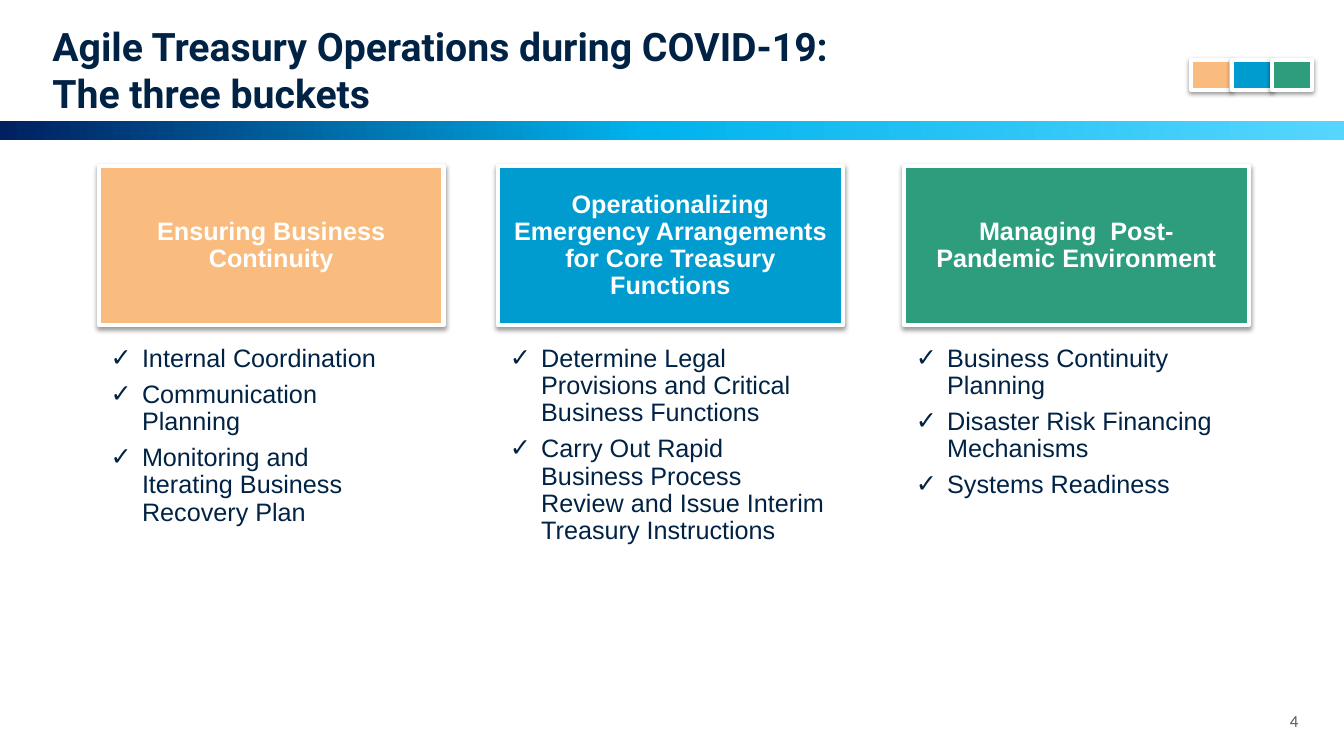
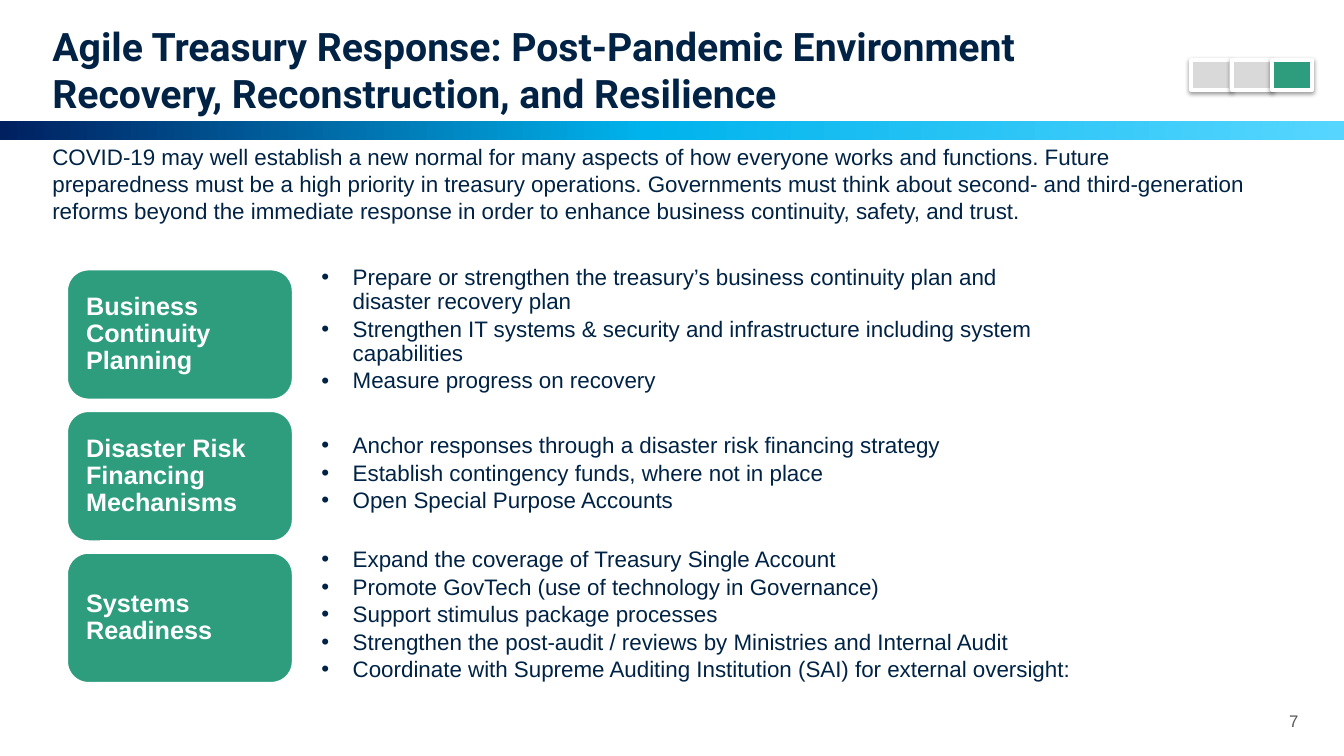
"""Build two slides on agile treasury operations during COVID-19."""
from copy import deepcopy

from pptx import Presentation
from pptx.dml.color import RGBColor
from pptx.enum.shapes import MSO_SHAPE
from pptx.enum.text import MSO_ANCHOR, MSO_AUTO_SIZE, PP_ALIGN
from pptx.oxml import parse_xml
from pptx.oxml.ns import nsdecls, qn
from pptx.util import Cm, Pt

COLORS = {
    "navy": "002345", "white": "FFFFFF", "gray": "595959", "inactive": "D9D9D9",
    "orange": "FABB7E", "blue": "009CCF", "green": "2E9D7E",
    "band start": "002060", "band middle": "00B3EC", "band end": "56D6FF",
}
BUCKET_COLORS = ["orange", "blue", "green"]


def write_text(shape, lines, size, color="navy", font="Arial", bold=False, bullet=None,
               align=PP_ALIGN.LEFT, anchor=MSO_ANCHOR.TOP, insets=(0, 0, 0, 0),
               spacing=None, after=0):
    """Fill a shape with evenly formatted paragraphs."""
    frame = shape.text_frame
    frame.word_wrap = True
    frame.vertical_anchor = anchor
    frame.margin_left, frame.margin_top, frame.margin_right, frame.margin_bottom = map(Cm, insets)
    frame.text = "\n".join(lines)
    for paragraph in frame.paragraphs:
        paragraph.alignment = align
        paragraph.line_spacing = spacing
        paragraph.space_after = Pt(after)
        if bullet:
            properties = paragraph._p.get_or_add_pPr()
            properties.set("marL", str(Cm(0.79)))
            properties.set("indent", str(-Cm(0.79)))
            properties.append(parse_xml(f'<a:buFont {nsdecls("a")} typeface="Arial"/>'))
            properties.append(parse_xml(f'<a:buChar {nsdecls("a")} char="{bullet}"/>'))
        paragraph.font.name = font
        paragraph.font.size = Pt(size)
        paragraph.font.bold = bold
        paragraph.font.color.rgb = RGBColor.from_string(COLORS[color])


def add_box(shapes, kind, left, top, width, height, color, line_width, shadow=False):
    """Add a filled box with a white outline and, if asked, a soft shadow."""
    box = shapes.add_shape(kind, Cm(left), Cm(top), Cm(width), Cm(height))
    box.fill.solid()
    box.fill.fore_color.rgb = RGBColor.from_string(COLORS[color])
    box.line.color.rgb = RGBColor.from_string(COLORS["white"])
    box.line.width = Pt(line_width)
    box.shadow.inherit = False
    if shadow:
        box._element.spPr.find(qn("a:effectLst")).append(parse_xml(
            f'<a:outerShdw {nsdecls("a")} blurRad="40000" dist="20000" dir="5400000" rotWithShape="0">'
            '<a:srgbClr val="000000"><a:alpha val="38000"/></a:srgbClr></a:outerShdw>'))
    return box


presentation = Presentation()
presentation.slide_width = Cm(33.87)
presentation.slide_height = Cm(19.05)
layout = presentation.slide_layouts[5]
for placeholder in list(layout.placeholders)[1:]:
    placeholder._element.getparent().remove(placeholder._element)

headers = [
    ("Agile Treasury Operations during COVID-19:\vThe three buckets", "4", BUCKET_COLORS),
    ("Agile Treasury Response: Post-Pandemic Environment\vRecovery, Reconstruction, and Resilience",
     "7", ["inactive", "inactive", "green"]),
]
for title_text, number, swatch_colors in headers:
    slide = presentation.slides.add_slide(layout)
    title = slide.shapes.title
    title.left, title.top, title.width, title.height = Cm(1.32), Cm(0.82), Cm(31.34), Cm(2.11)
    write_text(title, [title_text], 28, font="Roboto", bold=True, anchor=MSO_ANCHOR.BOTTOM)
    title.text_frame.auto_size = MSO_AUTO_SIZE.NONE

    page_number = slide.shapes.add_textbox(Cm(31.55), Cm(17.65), Cm(1.17), Cm(1.02))
    write_text(page_number, [number], 12, "gray", "Calibri" if number == "4" else "Arial",
               align=PP_ALIGN.RIGHT, anchor=MSO_ANCHOR.MIDDLE)

    swatches = slide.shapes.add_group_shape()
    for index, color in enumerate(swatch_colors):
        add_box(swatches.shapes, MSO_SHAPE.RECTANGLE, 30.02 + 1.02 * index, 1.52, 1.01, 0.74,
                color, 3, shadow=True)

buckets_slide, recovery_slide = presentation.slides

band = buckets_slide.shapes.add_shape(MSO_SHAPE.RECTANGLE, 0, Cm(3.05), presentation.slide_width, Cm(0.48))
band.line.fill.background()
band.shadow.inherit = False
band.fill.gradient()
band.fill.gradient_angle = 0
stop_list = band._element.spPr.find(qn("a:gradFill")).find(qn("a:gsLst"))
stop_list.insert(1, deepcopy(stop_list[0]))
band_stops = [(0, "band start"), (0.48, "band middle"), (1, "band end")]
for stop, (position, color) in zip(band.fill.gradient_stops, band_stops):
    stop.position = position
    stop.color.rgb = RGBColor.from_string(COLORS[color])
layout.shapes._spTree.insert(2, band._element)

buckets = [
    (2.49, 7.85, "Ensuring Business Continuity",
     ["Internal Coordination", "Communication Planning",
      "Monitoring and Iterating Business Recovery Plan"]),
    (12.55, 8.69, "Operationalizing Emergency Arrangements for Core Treasury Functions",
     ["Determine Legal Provisions and Critical Business Functions",
      "Carry Out Rapid Business Process Review and Issue Interim Treasury Instructions"]),
    (22.78, 8.61, "Managing  Post-Pandemic Environment",
     ["Business Continuity Planning", "Disaster Risk Financing Mechanisms", "Systems Readiness"]),
]
for (left, list_width, heading, actions), color in zip(buckets, BUCKET_COLORS):
    heading_box = add_box(buckets_slide.shapes, MSO_SHAPE.RECTANGLE, left, 4.19, 8.69, 4.01,
                          color, 3, shadow=True)
    write_text(heading_box, [heading], 18, "white", bold=True, align=PP_ALIGN.CENTER,
               anchor=MSO_ANCHOR.MIDDLE, insets=(0.4, 0.23, 0.4, 0.23), spacing=0.9, after=6.3)
    action_list = buckets_slide.shapes.add_textbox(Cm(left), Cm(8.41), Cm(list_width), Cm(7.8))
    write_text(action_list, actions, 18, bullet="✓", insets=(0.3, 0.3, 0.4, 0.43),
               spacing=0.9, after=6.3)

introduction = recovery_slide.shapes.add_textbox(Cm(1.32), Cm(3.61), Cm(30.23), Cm(2.64))
write_text(introduction, [
    "COVID-19 may well establish a new normal for many aspects of how everyone works and functions. "
    "Future preparedness must be a high priority in treasury operations. Governments must think about "
    "second- and third-generation reforms beyond the immediate response in order to enhance business "
    "continuity, safety, and trust."], 16)

pillars = [
    ("Business Continuity Planning", 6.58, 18.87, 4.32,
     ["Prepare or strengthen the treasury’s business continuity plan and disaster recovery plan",
      "Strengthen IT systems & security and infrastructure including system capabilities",
      "Measure progress on recovery"]),
    ("Disaster Risk Financing Mechanisms", 10.82, 16.94, 2.31,
     ["Anchor responses through a disaster risk financing strategy",
      "Establish contingency funds, where not in place",
      "Open Special Purpose Accounts"]),
    ("Systems Readiness", 13.69, 21.18, 3.73,
     ["Expand the coverage of Treasury Single Account",
      "Promote GovTech (use of technology in Governance)",
      "Support stimulus package processes",
      "Strengthen the post-audit / reviews by Ministries and Internal Audit",
      "Coordinate with Supreme Auditing Institution (SAI) for external oversight:"]),
]
for index, (heading, list_top, list_width, list_height, measures) in enumerate(pillars):
    pillar_box = add_box(recovery_slide.shapes, MSO_SHAPE.ROUNDED_RECTANGLE,
                         1.68, 6.78 + 3.57 * index, 5.71, 3.3, "green", 2)
    write_text(pillar_box, [heading], 18, "white", bold=True, anchor=MSO_ANCHOR.MIDDLE,
               insets=(0.33, 0.25, 0.33, 0.25), spacing=0.9, after=6.3)
    measure_list = recovery_slide.shapes.add_textbox(Cm(7.85), Cm(list_top), Cm(list_width), Cm(list_height))
    write_text(measure_list, measures, 16, bullet="•", insets=(0.25, 0.13, 0.25, 0.13),
               spacing=0.9, after=2.4)

presentation.save("out.pptx")
